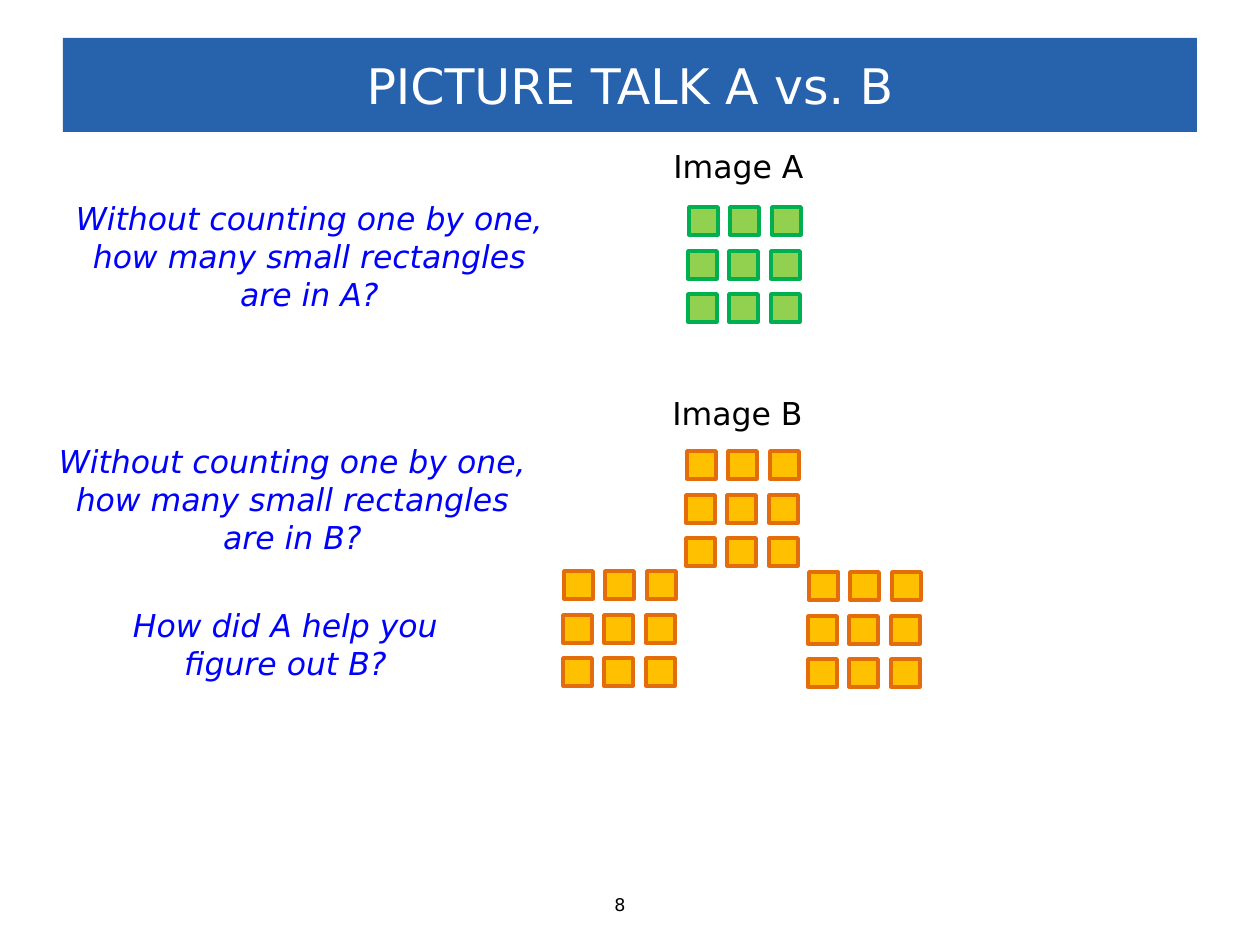
from itertools import product

from pptx import Presentation
from pptx.dml.color import RGBColor
from pptx.enum.shapes import MSO_SHAPE
from pptx.enum.text import MSO_ANCHOR, MSO_AUTO_SIZE, PP_ALIGN
from pptx.util import Emu, Pt

FONT = "DejaVu Sans"
COLORS = {
    "banner": "2762AD",
    "white": "FFFFFF",
    "black": "000000",
    "question": "0000FF",
    "green": "92D050",
    "green_edge": "00B050",
    "gold": "FFC000",
    "gold_edge": "E46C0A",
}
COLUMN_OFFSETS = (0, 41, 83)
ROW_OFFSETS = (0, 44, 87)
TILE_SIZE = (29, 28)


def px(length):
    """Turn pixels into EMU."""
    return Emu(round(length * 914400 / 126))


def color(name):
    """Look up a named colour."""
    return RGBColor.from_string(COLORS[name])


def style(paragraph, size, color_name, italic=False):
    """Set the font of a whole paragraph."""
    paragraph.font.name = FONT
    paragraph.font.size = Pt(size)
    paragraph.font.italic = italic
    paragraph.font.color.rgb = color(color_name)


def add_banner(slide, box, text):
    """Draw the filled title bar."""
    shape = slide.shapes.add_shape(MSO_SHAPE.RECTANGLE, *map(px, box))
    shape.shadow.inherit = False
    shape.fill.solid()
    shape.fill.fore_color.rgb = color("banner")
    shape.line.fill.background()
    shape.text_frame.vertical_anchor = MSO_ANCHOR.MIDDLE
    paragraph = shape.text_frame.paragraphs[0]
    paragraph.text = text
    paragraph.alignment = PP_ALIGN.CENTER
    style(paragraph, 28, "white")


def add_text(slide, box, text, wrap):
    """Add a text box and return its paragraph."""
    frame = slide.shapes.add_textbox(*map(px, box)).text_frame
    frame.word_wrap = wrap
    frame.auto_size = MSO_AUTO_SIZE.SHAPE_TO_FIT_TEXT
    paragraph = frame.paragraphs[0]
    paragraph.text = text
    return paragraph


def add_label(slide, box, text, size=18):
    """Add a one-line black label."""
    style(add_text(slide, box, text, False), size, "black")


def add_question(slide, box, text):
    """Add a centred italic question."""
    paragraph = add_text(slide, box, text, True)
    paragraph.alignment = PP_ALIGN.CENTER
    style(paragraph, 18, "question", italic=True)


def add_tile_grid(slide, left, top, fill):
    """Draw a group of three by three tiles, the top row one pixel to the right."""
    group = slide.shapes.add_group_shape()
    for y, x in product(ROW_OFFSETS, COLUMN_OFFSETS):
        shift = 1 if y == 0 else 0
        box = (left + x + shift, top + y, *TILE_SIZE)
        tile = group.shapes.add_shape(MSO_SHAPE.RECTANGLE, *map(px, box))
        tile.shadow.inherit = False
        tile.fill.solid()
        tile.fill.fore_color.rgb = color(fill)
        tile.line.color.rgb = color(f"{fill}_edge")
        tile.line.width = Pt(2)


def main():
    """Build the slide."""
    presentation = Presentation()
    presentation.slide_width, presentation.slide_height = px(1260), px(945)
    slide = presentation.slides.add_slide(presentation.slide_layouts[6])

    add_banner(slide, (63, 38, 1134, 94), "PICTURE TALK A vs. B")

    add_label(slide, (661, 141, 160, 50), "Image A")
    add_question(slide, (57, 193, 505, 127),
                 "Without counting one by one, how many small rectangles are in A?")
    add_tile_grid(slide, 688, 207, "green")

    add_label(slide, (660, 388, 160, 50), "Image B")
    for left, top in ((686, 451), (808, 572), (563, 571)):
        add_tile_grid(slide, left, top, "gold")
    add_question(slide, (40, 436, 505, 127),
                 "Without counting one by one, how many small rectangles are in B?")
    add_question(slide, (74, 600, 423, 89), "How did A help you figure out B?")

    add_label(slide, (602, 888, 55, 34), "8", 10)
    presentation.save("out.pptx")


if __name__ == "__main__":
    main()
